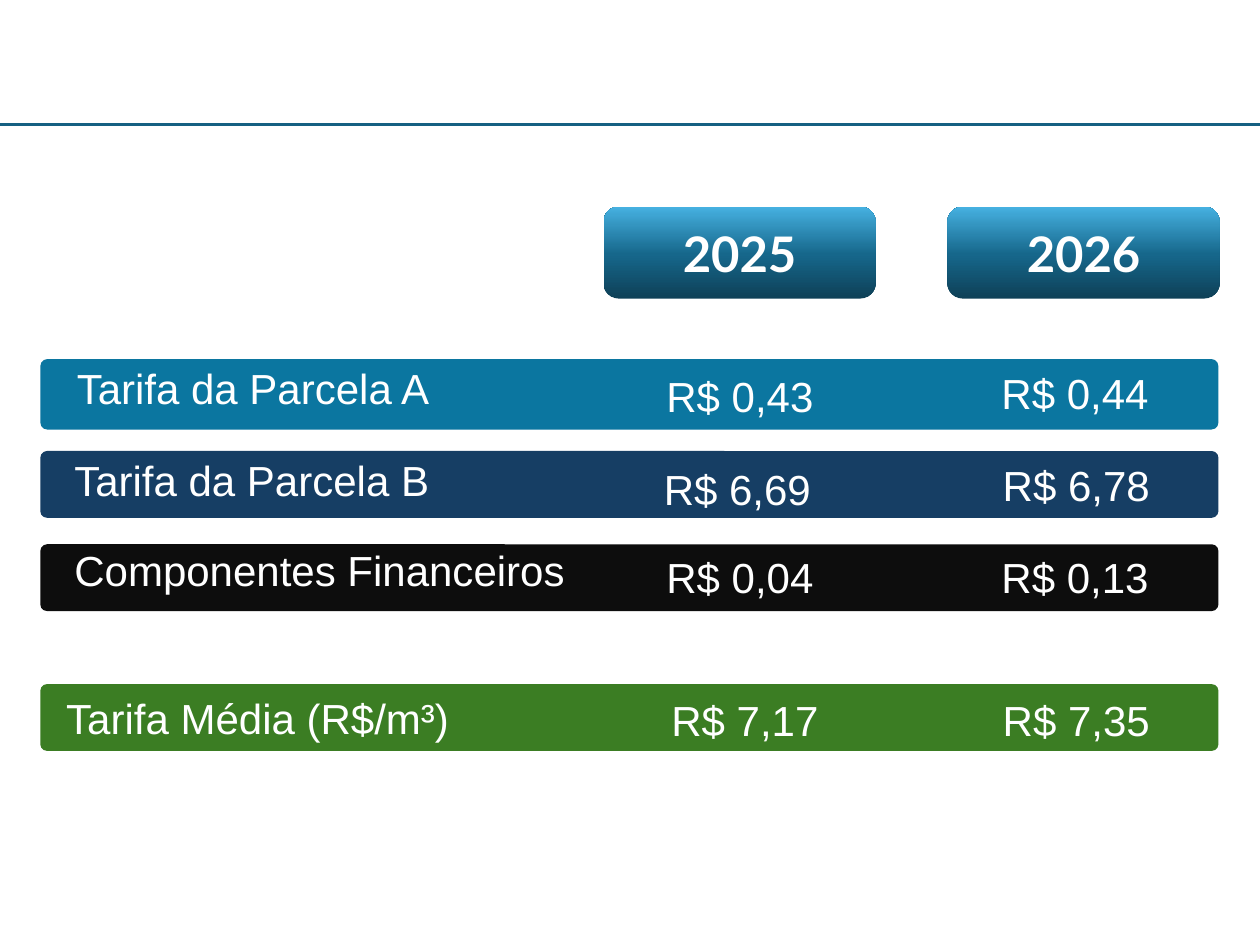
import copy

import pptx
import pptx.dml.color
import pptx.enum.shapes
import pptx.enum.text
import pptx.oxml.ns
import pptx.util
from lxml import etree

Inches = pptx.util.Inches
Pt = pptx.util.Pt
Anchor = pptx.enum.text.MSO_ANCHOR
Align = pptx.enum.text.PP_ALIGN
qn = pptx.oxml.ns.qn

HUES = {
    "rule": "156082",
    "white": "FFFFFF",
    "part_a": "0B76A0",
    "part_b": "163E64",
    "extra": "0D0D0D",
    "mean": "3B7D23",
    "low": "0E4057",
    "mid": "16678B",
    "high": "46B1E1",
}


def tint(name):
    return pptx.dml.color.RGBColor.from_string(HUES[name])


class Page:
    def __init__(self, slide, font="Arial", size=24):
        self.slide = slide
        self.font = font
        self.size = size

    def add_run(self, frame, text, font=None, size=None, bold=False):
        para = frame.paragraphs[0]
        run = para.add_run()
        run.text = text
        run.font.name = font or self.font
        run.font.size = Pt(size or self.size)
        run.font.bold = bold
        run.font.color.rgb = tint("white")
        return para

    def rule(self, top):
        line = self.slide.shapes.add_connector(
            pptx.enum.shapes.MSO_CONNECTOR.STRAIGHT,
            0, Inches(top), Inches(10), Inches(top))
        line.line.color.rgb = tint("rule")
        line.line.width = Pt(2)
        etree.SubElement(line._element.spPr, qn("a:effectLst"))

    def block(self, left, top, width, height):
        shape = self.slide.shapes.add_shape(
            pptx.enum.shapes.MSO_SHAPE.ROUNDED_RECTANGLE,
            Inches(left), Inches(top), Inches(width), Inches(height))
        shape.shadow.inherit = False
        shape.line.fill.background()
        shape.text_frame.vertical_anchor = Anchor.MIDDLE
        return shape

    def bar(self, top, height, hue):
        shape = self.block(0.32, top, 9.35, height)
        shape.adjustments[0] = 0.1
        shape.fill.solid()
        shape.fill.fore_color.rgb = tint(hue)
        return shape

    def head(self, left, text):
        """Draw a year button, dark at the foot and light at the top."""
        shape = self.block(left, 1.64, 2.16, 0.73)
        shape.fill.gradient()
        shape.fill.gradient_angle = 90
        stops = shape._element.spPr.find(".//" + qn("a:gsLst"))
        stops.insert(1, copy.deepcopy(stops[0]))
        marks = ((0, "low"), (0.48, "mid"), (1, "high"))
        for stop, (place, hue) in zip(shape.fill.gradient_stops, marks):
            stop.position = place
            stop.color.rgb = tint(hue)
        para = self.add_run(shape.text_frame, text, "Lato", 28, True)
        para.alignment = Align.CENTER

    def label(self, left, top, text):
        box = self.slide.shapes.add_textbox(
            Inches(left), Inches(top), Inches(8.9), Inches(0.5))
        frame = box.text_frame
        frame.word_wrap = True
        frame.margin_left = frame.margin_right = Inches(0.05)
        self.add_run(frame, text).line_spacing = 0.9

    def value(self, left, top, text):
        box = self.slide.shapes.add_textbox(
            Inches(left), Inches(top), Inches(1.6), Inches(0.5))
        box.text_frame.word_wrap = True
        self.add_run(box.text_frame, text)


def main():
    deck = pptx.Presentation()
    deck.slide_width = Inches(10)
    deck.slide_height = Inches(7.5)
    page = Page(deck.slides.add_slide(deck.slide_layouts[6]))

    page.rule(0.99)
    for left, year in ((4.79, "2025"), (7.52, "2026")):
        page.head(left, year)

    # bar top, height, hue; label left, top, text
    rows = (
        (2.85, 0.56, "part_a", 0.56, 2.87, "Tarifa da Parcela A"),
        (3.58, 0.53, "part_b", 0.54, 3.6, "Tarifa da Parcela B"),
        (4.32, 0.53, "extra", 0.54, 4.32, "Componentes Financeiros"),
    )
    for top, height, hue, left, y, text in rows:
        page.bar(top, height, hue)
        page.label(left, y, text)

    mean = page.bar(5.43, 0.53, "mean").text_frame
    mean.margin_left = Inches(0.19)
    page.add_run(mean, "Tarifa Média (R$/m³)").alignment = Align.LEFT

    prices = (
        (5.19, 2.89, "R$ 0,43"), (7.85, 2.87, "R$ 0,44"),
        (5.17, 3.63, "R$ 6,69"), (7.86, 3.6, "R$ 6,78"),
        (5.19, 4.33, "R$ 0,04"), (7.85, 4.33, "R$ 0,13"),
        (5.23, 5.46, "R$ 7,17"), (7.86, 5.46, "R$ 7,35"),
    )
    for left, top, text in prices:
        page.value(left, top, text)

    deck.save("out.pptx")


if __name__ == "__main__":
    main()
